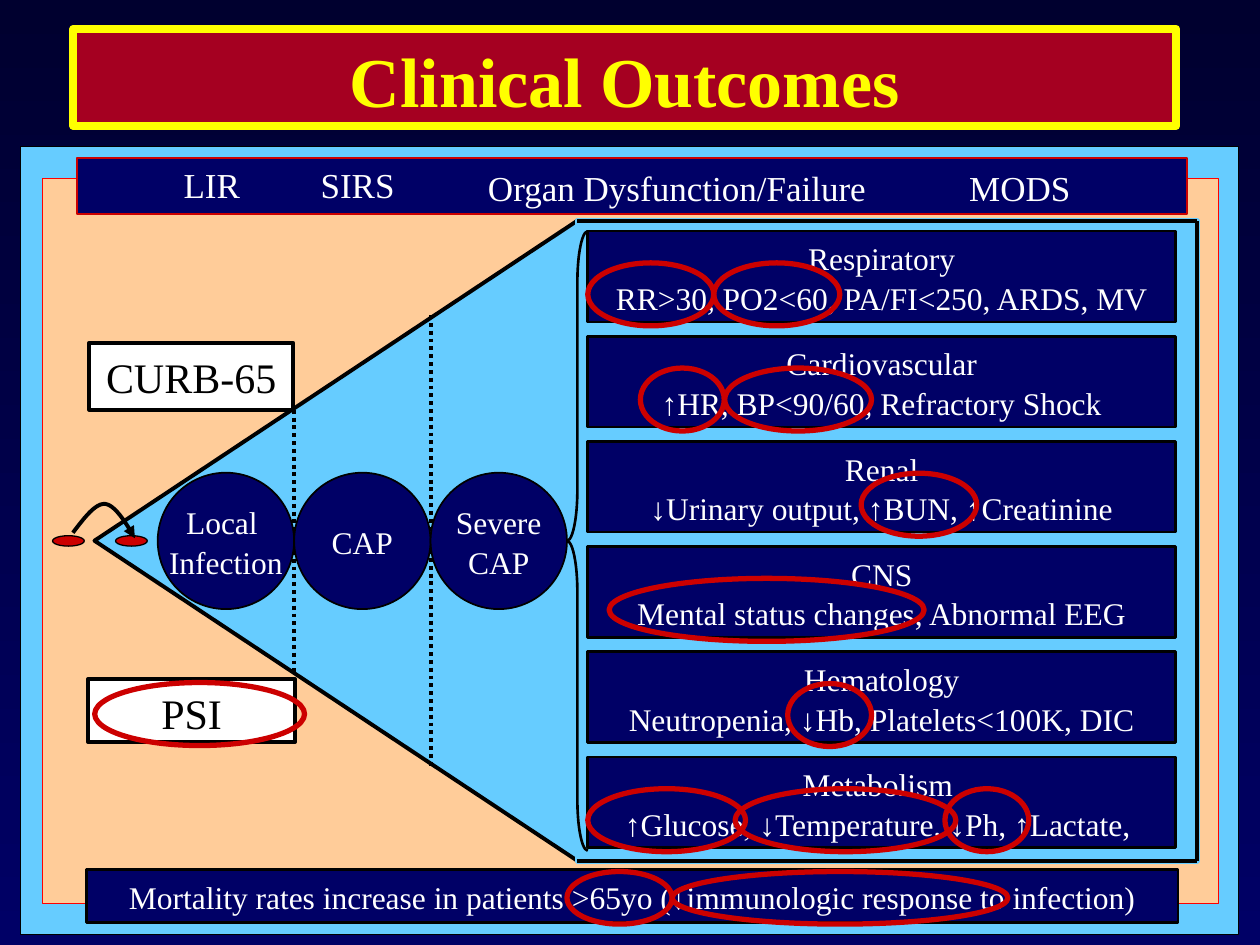
from dataclasses import dataclass
from typing import Optional

from lxml.etree import SubElement
from pptx import Presentation
from pptx.dml.color import RGBColor
from pptx.enum.dml import MSO_LINE_DASH_STYLE as Dash
from pptx.enum.shapes import MSO_CONNECTOR as Connector, MSO_SHAPE as Preset
from pptx.enum.text import MSO_ANCHOR as Anchor, PP_ALIGN as Align
from pptx.oxml.ns import qn
from pptx.util import Cm, Pt

NAVY, SKY, PEACH = "000066", "66CCFF", "FFCC99"
BLACK, WHITE, RED, YELLOW = "000000", "FFFFFF", "CC0000", "FFFF00"


@dataclass(frozen=True)
class Box:
    left: float
    top: float
    width: float
    height: float

    def lengths(self) -> list:
        return [Cm(v) for v in (self.left, self.top, self.width, self.height)]


@dataclass(frozen=True)
class Organ:
    name: str
    signs: str
    rings: tuple


@dataclass(frozen=True)
class Line:
    start: tuple
    end: tuple
    dash: Optional[Dash] = None


ORGANS = [
    Organ("Respiratory", "RR>30, PO2<60, PA/FI<250, ARDS, MV",
          ((11.85, 2.54), (14.39, 2.54))),
    Organ("Cardiovascular", "↑HR, BP<90/60, Refractory Shock",
          ((12.91, 1.69), (14.61, 2.96))),
    Organ("Renal", "↓Urinary output, ↑BUN, ↑Creatinine", ((17.36, 2.33),)),
    Organ("CNS", "Mental status changes, Abnormal EEG", ((12.28, 6.35),)),
    Organ("Hematology", "Neutropenia, ↓Hb, Platelets<100K, DIC", ((15.88, 1.69),)),
    Organ("Metabolism ", "↑Glucose, ↓Temperature, ↓Ph, ↑Lactate, ",
          ((11.85, 3.18), (14.82, 4.45), (19.05, 1.69))),
]
ORGAN_TOP, ORGAN_PITCH = 4.66, 2.12

STAGE_LABELS = [
    ("LIR", Box(3.38, 3.12, 1.78, 1.09)),
    ("SIRS", Box(6.17, 3.12, 2.08, 1.09)),
    ("Organ Dysfunction/Failure", Box(9.32, 3.18, 8.66, 1.09)),
    ("MODS", Box(19.25, 3.18, 2.62, 1.09)),
]
INFECTIONS = ["Local \nInfection", "CAP", "Severe\nCAP"]
LINES = [
    Line((8.68, 6.35), (8.68, 15.45), Dash.ROUND_DOT),
    Line((5.93, 8.26), (5.93, 13.55), Dash.ROUND_DOT),
    Line((11.64, 4.45), (24.13, 4.45)),
    Line((11.64, 17.36), (24.13, 17.36)),
    Line((24.13, 17.36), (24.13, 4.45)),
]
SPREAD_CURVES = [
    ((1.47, 10.74), (1.70, 10.44), (1.93, 10.13), (2.13, 10.16)),
    ((2.13, 10.16), (2.36, 10.19), (2.64, 10.72), (2.72, 10.85)),
]


def color(code: str) -> RGBColor:
    return RGBColor.from_string(code)


def outline(line, code: str, weight: float) -> None:
    line.color.rgb = color(code)
    line.width = Pt(weight)


def write(frame, text: str, size: float, ink: str = WHITE, bold: bool = False,
          wrap: bool = True, anchor: Anchor = Anchor.TOP) -> None:
    for key, value in {"word_wrap": wrap, "vertical_anchor": anchor, "text": text}.items():
        setattr(frame, key, value)
    for paragraph in frame.paragraphs:
        for key, value in {"alignment": Align.CENTER, "line_spacing": 1.05}.items():
            setattr(paragraph, key, value)
        font = paragraph.runs[0].font
        for key, value in {"name": "Times New Roman", "size": Pt(size), "bold": bold}.items():
            setattr(font, key, value)
        font.color.rgb = color(ink)


def draw(slide, preset: Preset, box: Box, fill: Optional[str], edge: str, weight: float):
    shape = slide.shapes.add_shape(preset, *box.lengths())
    shape.shadow.inherit = False
    if fill:
        shape.fill.solid()
        shape.fill.fore_color.rgb = color(fill)
    else:
        shape.fill.background()
    outline(shape.line, edge, weight)
    return shape


def draw_ring(slide, box: Box) -> None:
    draw(slide, Preset.OVAL, box, None, RED, 3)


def draw_line(slide, line: Line) -> None:
    connector = slide.shapes.add_connector(
        Connector.STRAIGHT, *[Cm(v) for v in line.start + line.end])
    outline(connector.line, BLACK, 2.25)
    if line.dash:
        connector.line.dash_style = line.dash
    SubElement(connector._element.spPr, qn("a:effectLst"))


def curve_point(curve: tuple, t: float) -> tuple:
    weights = ((1 - t) ** 3, 3 * t * (1 - t) ** 2, 3 * t ** 2 * (1 - t), t ** 3)
    return tuple(Cm(sum(w * p[axis] for w, p in zip(weights, curve))) for axis in (0, 1))


def draw_spread_arrow(slide) -> None:
    steps = 12
    points = [curve_point(curve, step / steps)
              for curve in SPREAD_CURVES for step in range(1, steps + 1)]
    builder = slide.shapes.build_freeform(*curve_point(SPREAD_CURVES[0], 0))
    builder.add_line_segments(points, close=False)
    arrow = builder.convert_to_shape()
    arrow.shadow.inherit = False
    arrow.fill.background()
    outline(arrow.line, BLACK, 2.25)
    SubElement(arrow.line._get_or_add_ln(), qn("a:tailEnd"), type="triangle")


def draw_title(slide) -> None:
    title = slide.shapes.title
    places = zip(("left", "top", "width", "height"), Box(1.48, 0.58, 22.23, 1.96).lengths())
    for key, value in places:
        setattr(title, key, value)
    title.fill.solid()
    title.fill.fore_color.rgb = color("A50021")
    outline(title.line, YELLOW, 4.5)
    write(title.text_frame, "Clinical Outcomes", 40, YELLOW, bold=True, anchor=Anchor.MIDDLE)


def draw_background(slide) -> None:
    fill = slide.background.fill
    fill.gradient()
    fill.gradient_angle = 270
    for stop, code in zip(fill.gradient_stops, ("00002F", NAVY)):
        stop.color.rgb = color(code)


def main() -> None:
    deck = Presentation()
    deck.slide_width, deck.slide_height = Cm(25.4), Cm(19.05)
    slide = deck.slides.add_slide(deck.slide_layouts[5])
    draw_background(slide)
    draw_title(slide)

    draw(slide, Preset.RECTANGLE, Box(0.42, 2.96, 24.55, 15.88), SKY, BLACK, 0.75)
    draw(slide, Preset.RECTANGLE, Box(0.85, 3.6, 23.71, 14.61), PEACH, "FF0000", 0.5)
    cone = draw(slide, Preset.ISOSCELES_TRIANGLE, Box(0.32, 6.03, 12.91, 9.74), SKY, BLACK, 2.25)
    cone.rotation = 270
    draw(slide, Preset.RECTANGLE, Box(11.64, 4.45, 12.49, 12.91), SKY, SKY, 3)
    for line in LINES:
        draw_line(slide, line)
    brace = draw(slide, Preset.LEFT_BRACE, Box(11.43, 4.66, 0.42, 12.49), None, BLACK, 1.5)
    brace.adjustments[0] = 2.458

    draw(slide, Preset.RECTANGLE, Box(1.55, 3.18, 22.38, 1.14), NAVY, RED, 1)
    for label, box in STAGE_LABELS:
        write(slide.shapes.add_textbox(*box.lengths()).text_frame, label, 20, wrap=False)

    for row, organ in enumerate(ORGANS):
        top = ORGAN_TOP + row * ORGAN_PITCH
        panel = draw(slide, Preset.RECTANGLE, Box(11.85, top, 11.85, 1.83), NAVY, BLACK, 1.5)
        write(panel.text_frame, f"{organ.name}\n{organ.signs}", 18)
        for left, width in organ.rings:
            draw_ring(slide, Box(left, top + 0.64, width, 1.27))

    mortality = draw(slide, Preset.RECTANGLE, Box(1.75, 17.53, 22, 1.07), NAVY, BLACK, 1.5)
    write(mortality.text_frame, "Mortality rates increase in patients >65yo "
          "(↓immunologic response to infection)", 18, wrap=False)
    for left, width in ((11.43, 2.12), (13.55, 6.77)):
        draw_ring(slide, Box(left, 17.57, width, 1.06))

    for column, infection in enumerate(INFECTIONS):
        disc = draw(slide, Preset.OVAL, Box(3.18 + column * 2.75, 9.53, 2.75, 2.75),
                    NAVY, BLACK, 1)
        write(disc.text_frame, infection, 18, wrap=False, anchor=Anchor.MIDDLE)
    for left in (1.06, 2.33):
        draw(slide, Preset.OVAL, Box(left, 10.8, 0.64, 0.21), RED, BLACK, 0.75)
    draw_spread_arrow(slide)

    for score, box in (("CURB-65", Box(1.8, 6.91, 4.11, 1.35)),
                       ("PSI", Box(1.78, 13.69, 4.17, 1.27))):
        card = draw(slide, Preset.RECTANGLE, box, WHITE, BLACK, 2.25)
        write(card.text_frame, score, 24, BLACK, wrap=False)
    draw_ring(slide, Box(1.91, 13.76, 4.23, 1.27))

    deck.save("out.pptx")


if __name__ == "__main__":
    main()
